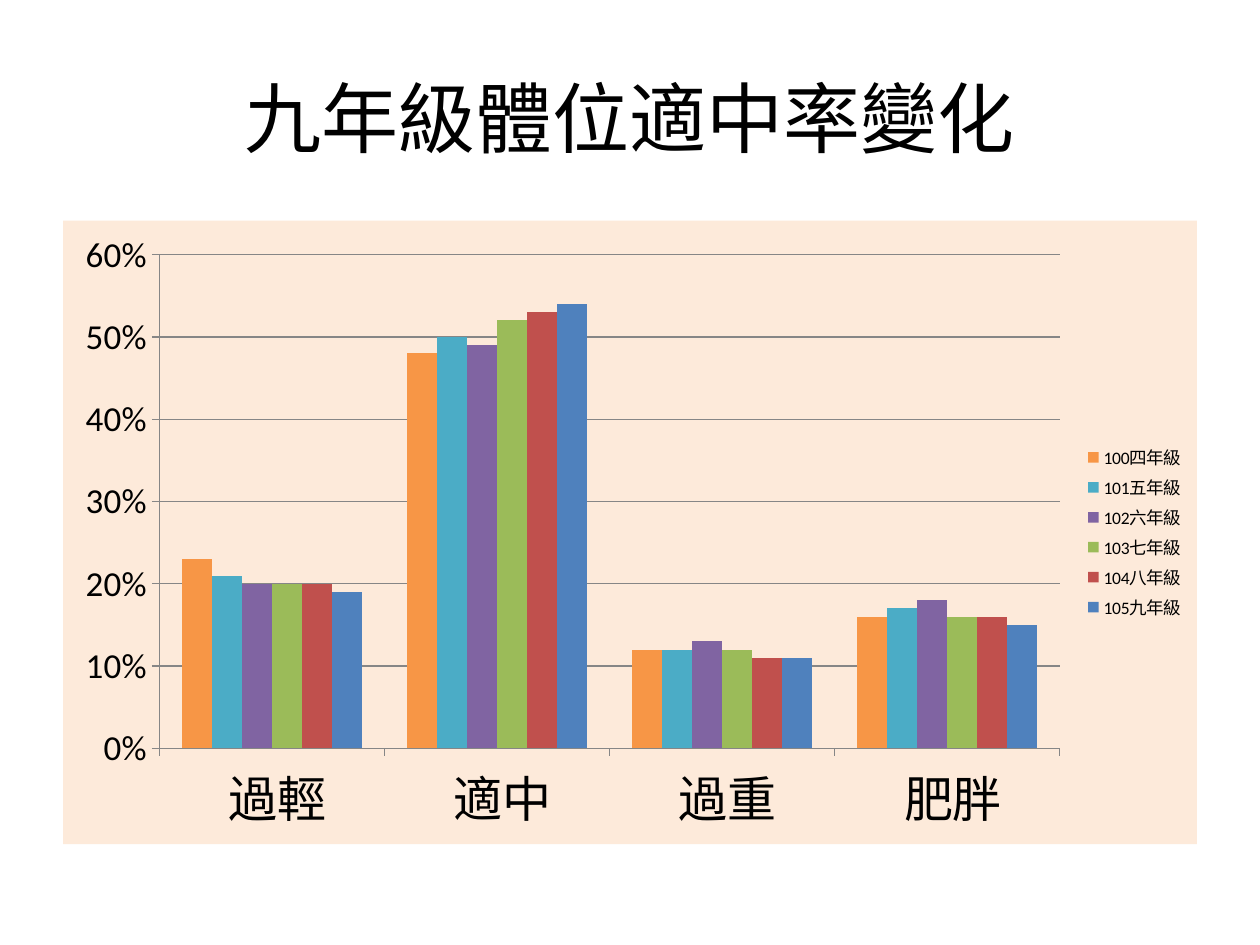
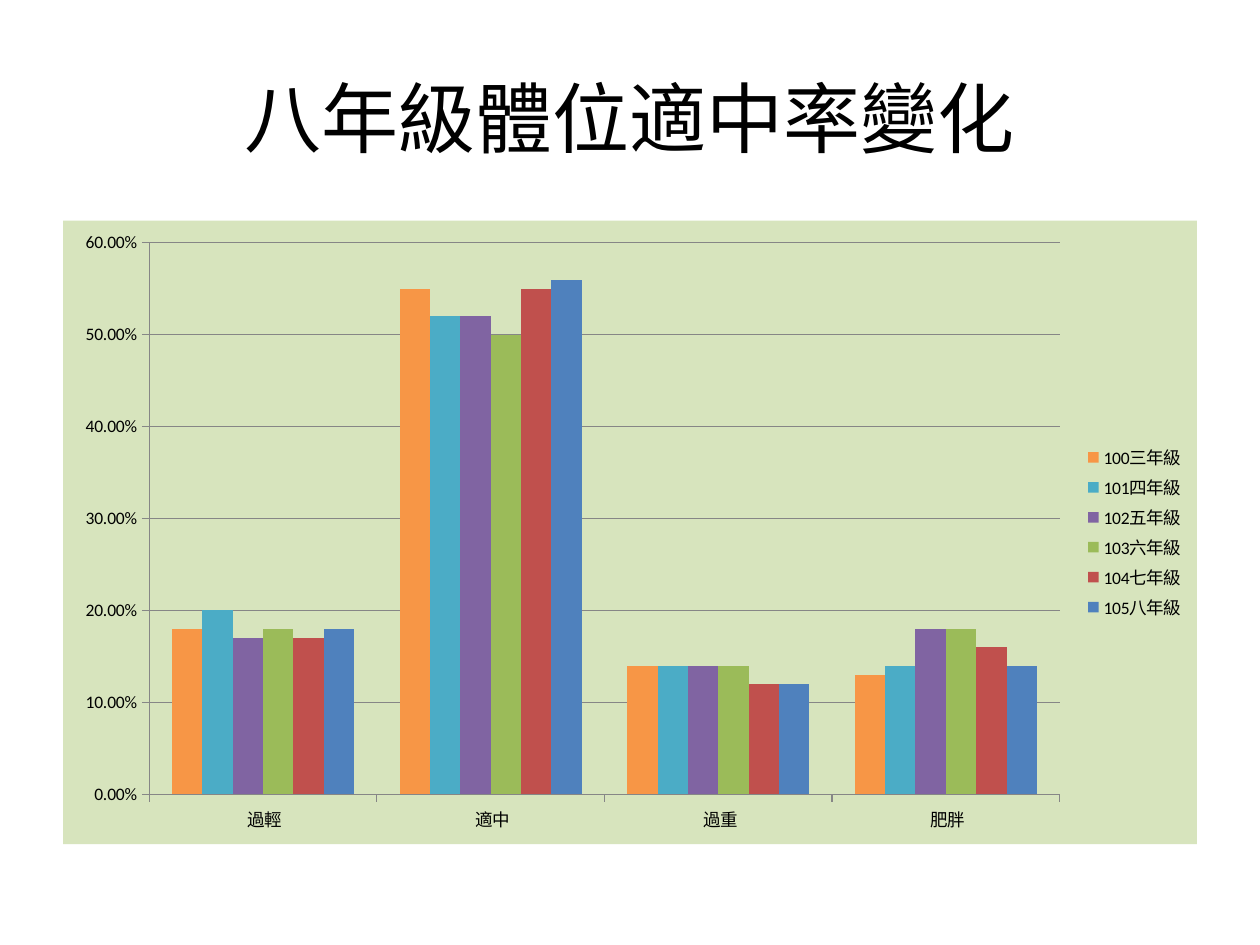
import pptx
import pptx.chart.data
import pptx.dml.color
import pptx.enum.chart
import pptx.enum.text
import pptx.util
from dataclasses import dataclass
from lxml import etree
from pptx.oxml.ns import qn


@dataclass(frozen=True)
class Theme:
    font: str = "Calibri"
    ink: str = "000000"
    rule: str = "868686"
    peach: str = "FDEADA"
    green: str = "D7E4BD"
    bars: tuple = ("F79646", "4BACC6", "8064A2", "9BBB59", "C0504D", "4F81BD")
    title: int = 44
    small: int = 10
    value: int = 20
    label: int = 28


THEME = Theme()
WIDE, HIGH = pptx.util.Inches(10), pptx.util.Inches(7.5)

# Boxes as shares of the slide: left, top, width, height
HEAD = (0.05, 0.04, 0.9, 1 / 6)
PLOT = (0.05, 7 / 30, 0.9, 0.66)

GROUPS = (" 過輕", " 適中", " 過重", " 肥胖")
NINTH = {
    "100四年級": (0.23, 0.48, 0.12, 0.16),
    "101五年級": (0.21, 0.50, 0.12, 0.17),
    "102六年級": (0.20, 0.49, 0.13, 0.18),
    "103七年級": (0.20, 0.52, 0.12, 0.16),
    "104八年級": (0.20, 0.53, 0.11, 0.16),
    "105九年級": (0.19, 0.54, 0.11, 0.15),
}
EIGHTH = {
    "100三年級": (0.18, 0.55, 0.14, 0.13),
    "101四年級": (0.20, 0.52, 0.14, 0.14),
    "102五年級": (0.17, 0.52, 0.14, 0.18),
    "103六年級": (0.18, 0.50, 0.14, 0.18),
    "104七年級": (0.17, 0.55, 0.12, 0.16),
    "105八年級": (0.18, 0.56, 0.12, 0.14),
}


def place(box):
    """Turn shares of the slide into lengths."""
    return [round(share * side) for share, side in zip(box, (WIDE, HIGH) * 2)]


def color(code):
    return pptx.dml.color.RGBColor.from_string(code)


def style(font, size):
    font.name = THEME.font
    font.size = pptx.util.Pt(size)
    font.color.rgb = color(THEME.ink)


def rule(form):
    form.line.color.rgb = color(THEME.rule)
    form.line.width = pptx.util.Pt(0.75)


def add_title(slide, text):
    title = slide.shapes.title
    title.left, title.top, title.width, title.height = place(HEAD)
    frame = title.text_frame
    frame.text = text
    frame.vertical_anchor = pptx.enum.text.MSO_ANCHOR.MIDDLE
    line = frame.paragraphs[0]
    line.alignment = pptx.enum.text.PP_ALIGN.CENTER
    style(line.runs[0].font, THEME.title)


def fill_back(chart, code):
    """Fill the chart area, which has no public fill."""
    props = etree.Element(qn("c:spPr"))
    solid = etree.SubElement(props, qn("a:solidFill"))
    etree.SubElement(solid, qn("a:srgbClr"), val=code)
    line = etree.SubElement(props, qn("a:ln"))
    etree.SubElement(line, qn("a:noFill"))
    chart.element.find(qn("c:chart")).addnext(props)


def set_axis(axis, size):
    axis.major_tick_mark = pptx.enum.chart.XL_TICK_MARK.OUTSIDE
    axis.minor_tick_mark = pptx.enum.chart.XL_TICK_MARK.NONE
    rule(axis.format)
    style(axis.tick_labels.font, size)


def add_bars(slide, rates, back, digits, label, value):
    data = pptx.chart.data.CategoryChartData(number_format=digits)
    data.categories = GROUPS
    for name, shares in rates.items():
        data.add_series(name, shares)
    kind = pptx.enum.chart.XL_CHART_TYPE.COLUMN_CLUSTERED
    chart = slide.shapes.add_chart(kind, *place(PLOT), data).chart
    chart.has_title = False
    style(chart.font, THEME.small)
    fill_back(chart, back)

    # Columns
    plot = chart.plots[0]
    plot.gap_width = 150
    plot.overlap = 0
    plot.vary_by_categories = False
    for bar, code in zip(plot.series, THEME.bars):
        bar.format.fill.solid()
        bar.format.fill.fore_color.rgb = color(code)

    # Axes
    set_axis(chart.category_axis, label)
    scale = chart.value_axis
    set_axis(scale, value)
    scale.minimum_scale, scale.maximum_scale, scale.major_unit = 0, 0.6, 0.1
    scale.has_major_gridlines = True
    rule(scale.major_gridlines.format)
    scale.tick_labels.number_format = digits
    scale.tick_labels.number_format_is_linked = False

    # Legend
    chart.has_legend = True
    chart.legend.position = pptx.enum.chart.XL_LEGEND_POSITION.RIGHT
    chart.legend.include_in_layout = False
    style(chart.legend.font, THEME.small)


def main():
    deck = pptx.Presentation()
    deck.slide_width, deck.slide_height = WIDE, HIGH
    pages = (
        ("九年級體位適中率變化", NINTH, THEME.peach, "0%", THEME.label, THEME.value),
        ("八年級體位適中率變化", EIGHTH, THEME.green, "0.00%", THEME.small, THEME.small),
    )
    for title, *bars in pages:
        slide = deck.slides.add_slide(deck.slide_layouts[5])
        add_title(slide, title)
        add_bars(slide, *bars)
    deck.save("out.pptx")


if __name__ == "__main__":
    main()
